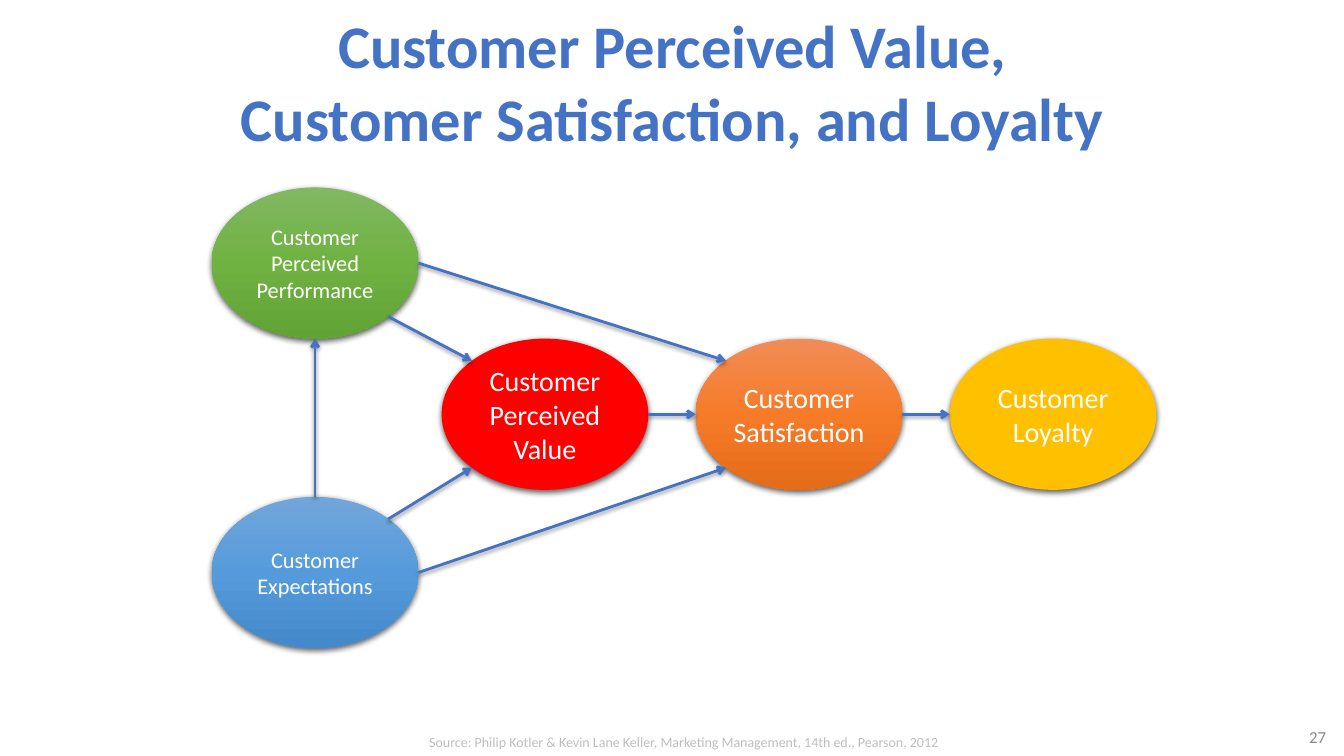
"""Build a slide on customer perceived value, satisfaction and loyalty."""
from math import cos, radians, sin

from lxml import etree
from pptx import Presentation
from pptx.dml.color import RGBColor
from pptx.enum.shapes import MSO_CONNECTOR, MSO_SHAPE
from pptx.enum.text import MSO_ANCHOR, PP_ALIGN
from pptx.oxml.ns import qn
from pptx.util import Inches, Pt

OVAL = MSO_SHAPE.OVAL
STRAIGHT = MSO_CONNECTOR.STRAIGHT
TOP, MIDDLE = MSO_ANCHOR.TOP, MSO_ANCHOR.MIDDLE
CENTER, RIGHT = PP_ALIGN.CENTER, PP_ALIGN.RIGHT

BLUE = RGBColor(0x44, 0x72, 0xC4)
GRAY = RGBColor(0x89, 0x89, 0x89)
PALE_GRAY = RGBColor(0xBF, 0xBF, 0xBF)
WHITE = RGBColor(0xFF, 0xFF, 0xFF)
RED = RGBColor(0xFF, 0x00, 0x00)
GOLD = RGBColor(0xFF, 0xC0, 0x00)
GREENS = [RGBColor(0x81, 0xB8, 0x61), RGBColor(0x6F, 0xB2, 0x42), RGBColor(0x62, 0xA3, 0x36)]
BLUES = [RGBColor(0x71, 0xA6, 0xDB), RGBColor(0x55, 0x9B, 0xDB), RGBColor(0x44, 0x8A, 0xCA)]
ORANGES = [RGBColor(0xF1, 0x8C, 0x57), RGBColor(0xF6, 0x7B, 0x28), RGBColor(0xE5, 0x6C, 0x19)]

TITLE = "Customer Perceived Value, Customer Satisfaction, and Loyalty"
SOURCE = "Source: Philip Kotler & Kevin Lane Keller, Marketing Management, 14th ed., Pearson, 2012"
PAGE_NUMBER = "27"

OVAL_WIDTH, OVAL_HEIGHT = 2.05, 1.5
CHAIN_LEFT, CHAIN_TOP, CHAIN_STEP = 4.38, 3.36, 2.52
CAUSE_LEFT = 2.1

CONCEPTS = {
    "performance": (CAUSE_LEFT, 1.86, GREENS, 16, ["Customer Perceived Performance"]),
    "expectations": (CAUSE_LEFT, 4.93, BLUES, 16, ["Customer", "Expectations"]),
    "value": (CHAIN_LEFT, CHAIN_TOP, [RED], 20, ["Customer", "Perceived Value"]),
    "satisfaction": (CHAIN_LEFT + CHAIN_STEP, CHAIN_TOP, ORANGES, 20, ["Customer", "Satisfaction"]),
    "loyalty": (CHAIN_LEFT + 2 * CHAIN_STEP, CHAIN_TOP, [GOLD], 20, ["Customer", "Loyalty"]),
}

SITE_TOP, SITE_TOP_LEFT, SITE_LEFT, SITE_BOTTOM_LEFT = 0, 1, 2, 3
SITE_BOTTOM, SITE_BOTTOM_RIGHT, SITE_RIGHT, SITE_TOP_RIGHT = 4, 5, 6, 7

ARROWS = [
    ("performance", SITE_BOTTOM_RIGHT, "value", SITE_TOP_LEFT),
    ("expectations", SITE_TOP_RIGHT, "value", SITE_BOTTOM_LEFT),
    ("expectations", SITE_TOP, "performance", SITE_BOTTOM),
    ("performance", SITE_RIGHT, "satisfaction", SITE_TOP_LEFT),
    ("expectations", SITE_RIGHT, "satisfaction", SITE_BOTTOM_LEFT),
    ("value", SITE_RIGHT, "satisfaction", SITE_LEFT),
    ("satisfaction", SITE_RIGHT, "loyalty", SITE_LEFT),
]


def write_text(shape, lines, size, color, bold=False, align=CENTER, anchor=MIDDLE, inset=None):
    frame = shape.text_frame
    frame.word_wrap = True
    frame.vertical_anchor = anchor
    if inset is not None:
        frame.margin_left = frame.margin_right = Inches(inset)
        frame.margin_top = frame.margin_bottom = Inches(inset)
    for index, line in enumerate(lines):
        para = frame.paragraphs[0] if index == 0 else frame.add_paragraph()
        para.alignment = align
        span = para.add_run()
        span.text = line
        span.font.name = "Calibri"
        span.font.size = Pt(size)
        span.font.bold = bold
        span.font.color.rgb = color


def add_text(page, left, top, width, height, text, **style):
    box = page.shapes.add_textbox(Inches(left), Inches(top), Inches(width), Inches(height))
    write_text(box, [text], **style)


def add_shadow(shape, opacity, blur, distance):
    effects = etree.SubElement(shape.element.spPr, qn("a:effectLst"))
    shadow = etree.SubElement(effects, qn("a:outerShdw"), blurRad=str(Pt(blur)),
                              dist=str(Pt(distance)), dir="5400000", rotWithShape="0")
    black = etree.SubElement(shadow, qn("a:srgbClr"), val="000000")
    etree.SubElement(black, qn("a:alpha"), val=str(opacity * 1000))


def paint(shape, colors):
    if len(colors) == 1:
        shape.fill.solid()
        shape.fill.fore_color.rgb = colors[0]
        return
    shape.fill.gradient()
    shape.fill.gradient_angle = 270
    stops = shape.element.spPr.find(qn("a:gradFill")).find(qn("a:gsLst"))
    for stop in list(stops):
        stops.remove(stop)
    for index, color in enumerate(colors):
        position = index * 100000 // (len(colors) - 1)
        stop = etree.SubElement(stops, qn("a:gs"), pos=str(position))
        etree.SubElement(stop, qn("a:srgbClr"), val=str(color))


def add_concept(page, left, top, colors, size, lines):
    oval = page.shapes.add_shape(OVAL, Inches(left), Inches(top),
                                 Inches(OVAL_WIDTH), Inches(OVAL_HEIGHT))
    paint(oval, colors)
    oval.line.fill.background()
    add_shadow(oval, 63, 4.5, 1.5)
    write_text(oval, lines, size, WHITE, inset=0)
    return oval


def site_point(oval, site):
    angle = radians(90 + 45 * site)
    x = oval.left + oval.width / 2 * (1 + cos(angle))
    y = oval.top + oval.height / 2 * (1 - sin(angle))
    return round(x), round(y)


def add_arrow(page, start, start_site, end, end_site):
    arrow = page.shapes.add_connector(STRAIGHT, *site_point(start, start_site),
                                      *site_point(end, end_site))
    joints = arrow.element.find(".//" + qn("p:cNvCxnSpPr"))
    for tag, oval, site in (("a:stCxn", start, start_site), ("a:endCxn", end, end_site)):
        etree.SubElement(joints, qn(tag), id=str(oval.shape_id), idx=str(site))
    arrow.line.color.rgb = BLUE
    arrow.line.width = Pt(2)
    etree.SubElement(arrow.element.spPr.find(qn("a:ln")), qn("a:tailEnd"), type="arrow")
    add_shadow(arrow, 38, 3.1, 1.6)


def main():
    deck = Presentation()
    deck.slide_width, deck.slide_height = Inches(13.33), Inches(7.5)
    page = deck.slides.add_slide(deck.slide_layouts[6])
    add_text(page, 2.17, 0.13, 9, 1.34, TITLE, size=43.2, color=BLUE, bold=True)
    add_text(page, 12.2, 7.18, 1.05, 0.26, PAGE_NUMBER, size=12, color=GRAY, align=RIGHT)
    ovals = {name: add_concept(page, *concept) for name, concept in CONCEPTS.items()}
    for start, start_site, end, end_site in ARROWS:
        add_arrow(page, ovals[start], start_site, ovals[end], end_site)
    add_text(page, 3.52, 7.23, 6.52, 0.27, SOURCE, size=10, color=PALE_GRAY, anchor=TOP)
    deck.save("out.pptx")


if __name__ == "__main__":
    main()
